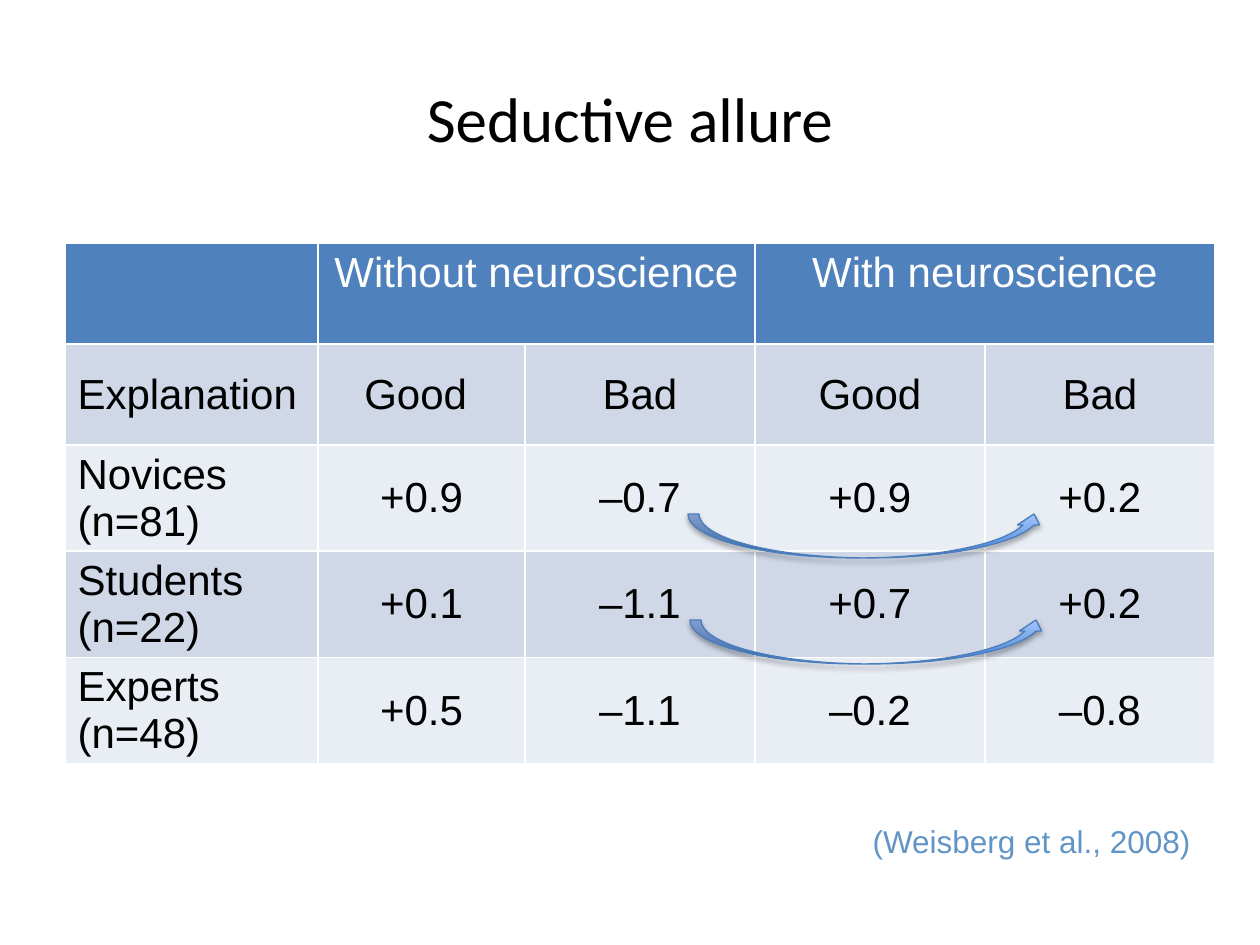
from lxml import etree
from pptx import Presentation
from pptx.dml.color import RGBColor
from pptx.enum.shapes import MSO_SHAPE
from pptx.enum.text import MSO_ANCHOR, MSO_AUTO_SIZE, PP_ALIGN
from pptx.oxml import parse_xml
from pptx.oxml.ns import nsdecls
from pptx.util import Emu, Pt

LEFT, CENTER, RIGHT = PP_ALIGN.LEFT, PP_ALIGN.CENTER, PP_ALIGN.RIGHT
TOP, MIDDLE = MSO_ANCHOR.TOP, MSO_ANCHOR.MIDDLE
CURVED_ARROW = MSO_SHAPE.CURVED_UP_ARROW
FIT_TEXT = MSO_AUTO_SIZE.SHAPE_TO_FIT_TEXT

PX = 914400 // 126  # EMU per px
THEME = {
    "title": {"name": "Calibri", "size": Pt(36), "color": "000000"},
    "header": {"name": "Arial", "size": Pt(24), "bold": False, "color": "FFFFFF"},
    "cell": {"name": "Arial", "size": Pt(24), "bold": False, "color": "000000"},
    "citation": {"name": "Arial", "size": Pt(18), "color": "6195C5"},
    "header_fill": "4F81BD",
    "band_fills": ["D0D8E8", "E9EDF4"],
    "arrow_stops": ["3F80CE", "A4C4FF"],
    "arrow_line": "4B7EBC",
}


def box(*lengths):
    return [Emu(length * PX) for length in lengths]


def write(frame, text, style, align, anchor):
    frame.text = text
    frame.vertical_anchor = anchor
    paragraph = frame.paragraphs[0]
    paragraph.alignment = align
    for key, value in THEME[style].items():
        if key == "color":
            paragraph.font.color.rgb = RGBColor.from_string(value)
        else:
            setattr(paragraph.font, key, value)
    for run in paragraph.runs:
        for key, value in THEME[style].items():
            if key == "color":
                run.font.color.rgb = RGBColor.from_string(value)
            else:
                setattr(run.font, key, value)


prs = Presentation()
prs.slide_width, prs.slide_height = box(1260, 945)
slide = prs.slides.add_slide(prs.slide_layouts[5])

# Title
title = slide.shapes.title
title.left, title.top, title.width, title.height = box(63, 38, 1134, 158)
write(title.text_frame, "Seductive allure", "title", CENTER, MIDDLE)

# Ratings table
ratings = [
    ["", "Without neuroscience", "", "With neuroscience", ""],
    ["Explanation", "Good ", "Bad", "Good", "Bad"],
    ["Novices (n=81)", "+0.9", "–0.7", "+0.9", "+0.2"],
    ["Students (n=22)", "+0.1", "–1.1", "+0.7", "+0.2"],
    ["Experts (n=48)", "+0.5", "–1.1", "–0.2", "–0.8"],
]
column_widths = [253, 207, 230, 230, 230]
row_height = 101
table = slide.shapes.add_table(
    len(ratings), len(column_widths),
    *box(65, 243, sum(column_widths), row_height * len(ratings))).table
for column, width in zip(table.columns, column_widths):
    column.width = Emu(width * PX)
for r, row in enumerate(ratings):
    table.rows[r].height = Emu(row_height * PX)
    fill = THEME["band_fills"][(r - 1) % 2] if r else THEME["header_fill"]
    for c, text in enumerate(row):
        cell = table.cell(r, c)
        cell.fill.solid()
        cell.fill.fore_color.rgb = RGBColor.from_string(fill)
        cell.vertical_anchor = MIDDLE if r else TOP
        write(cell.text_frame, text, "cell" if r else "header",
              CENTER if c else LEFT, cell.vertical_anchor)
for first in (1, 3):
    table.cell(0, first).merge(table.cell(0, first + 1))

# Arrows from bad explanations without to bad ones with neuroscience
for left, top in ((688, 514), (690, 620)):
    arrow = slide.shapes.add_shape(CURVED_ARROW, *box(left, top, 357, 44))
    arrow.fill.gradient()
    arrow.fill.gradient_angle = 90
    for stop, color in zip(arrow.fill.gradient_stops, THEME["arrow_stops"]):
        stop.color.rgb = RGBColor.from_string(color)
    arrow.line.color.rgb = RGBColor.from_string(THEME["arrow_line"])
    arrow.line.width = Pt(0.75)
    arrow.shadow.inherit = False
    effects = arrow.element.spPr.find("{*}effectLst")
    shadow = parse_xml(
        f'<a:outerShdw {nsdecls("a")} blurRad="40000" dist="23000" dir="5400000" '
        'rotWithShape="0"><a:srgbClr val="000000"><a:alpha val="35000"/>'
        '</a:srgbClr></a:outerShdw>')
    effects.append(shadow)
    etree.cleanup_namespaces(effects)

# Citation
citation = slide.shapes.add_textbox(*box(707, 816, 496, 51)).text_frame
citation.word_wrap = True
citation.auto_size = FIT_TEXT
write(citation, "(Weisberg et al., 2008)", "citation", RIGHT, TOP)

prs.save("out.pptx")
